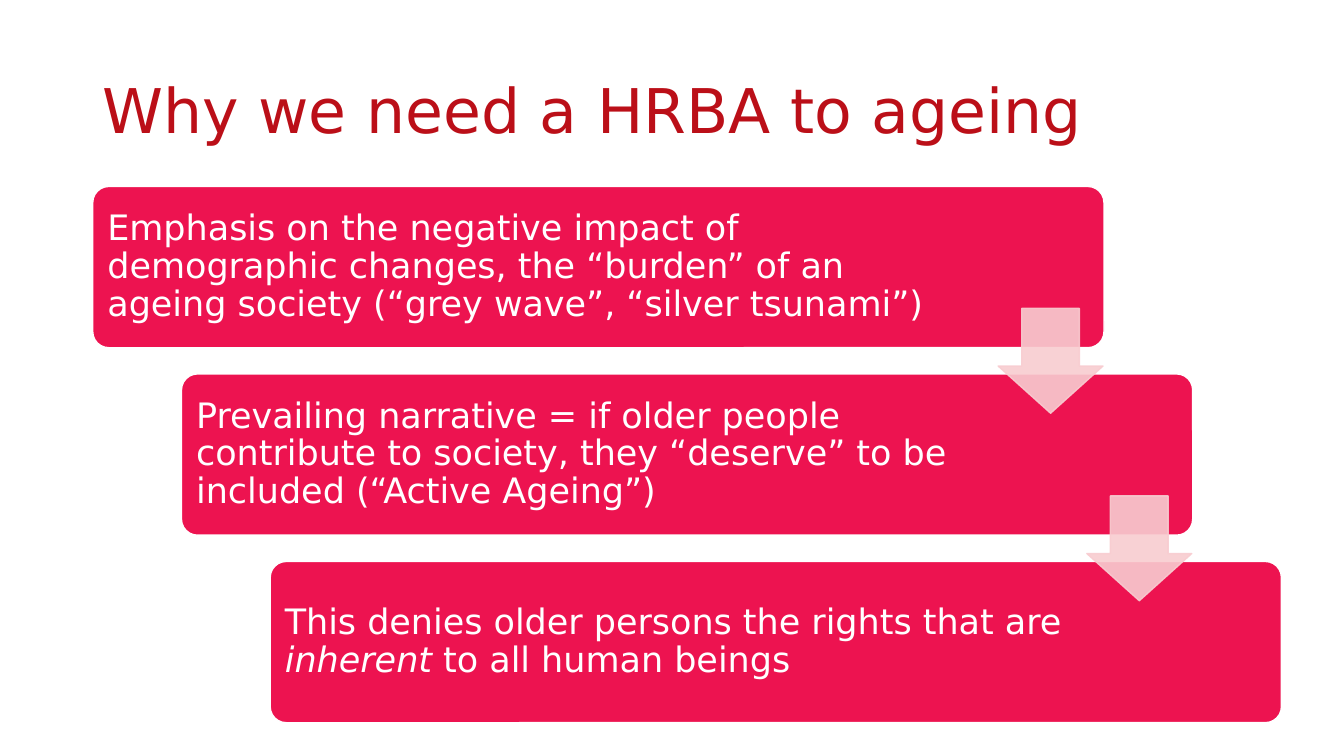
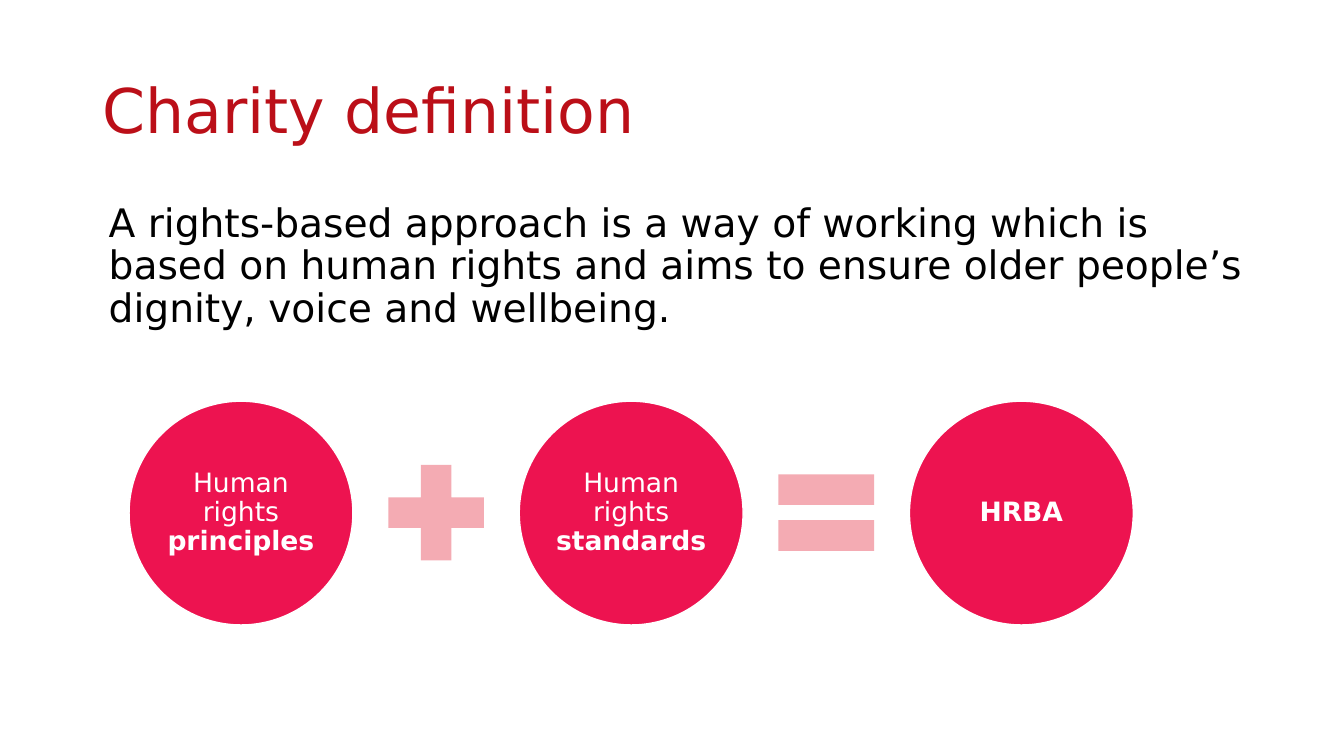
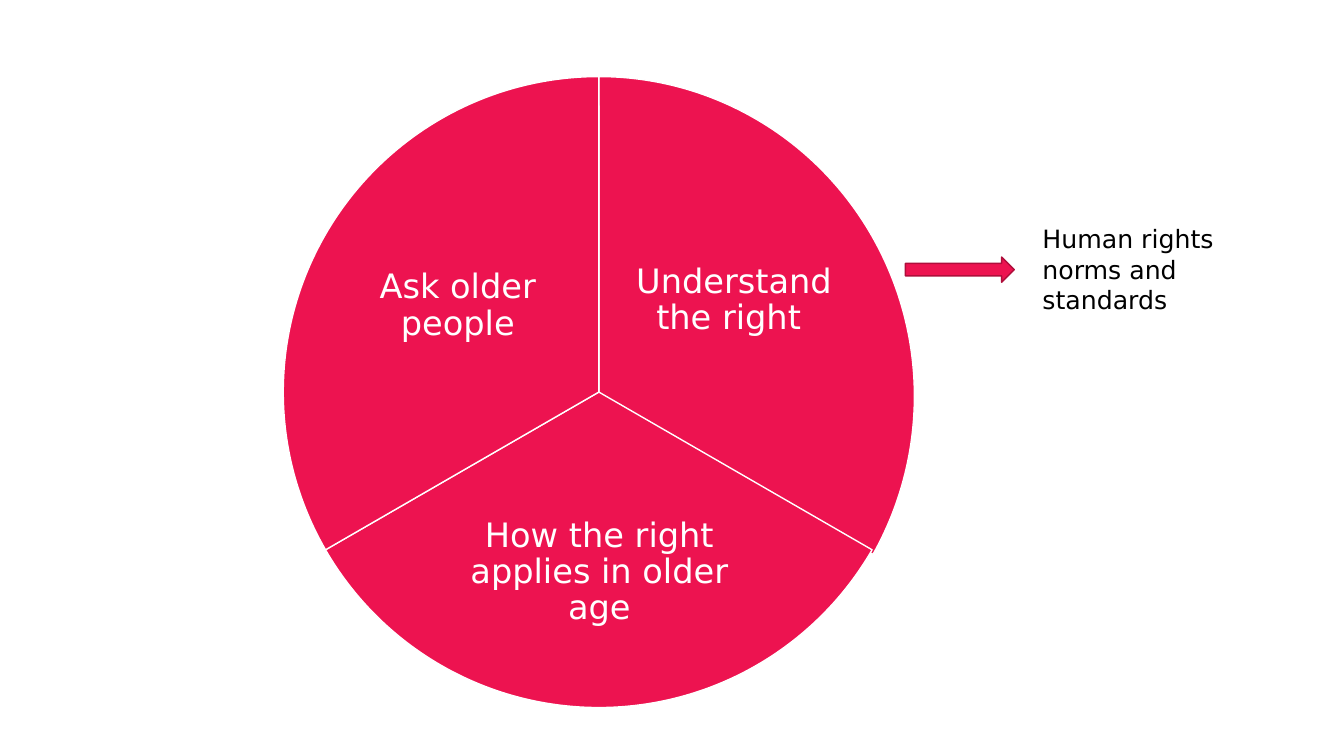
from dataclasses import dataclass

from lxml import etree
from pptx import Presentation
from pptx.dml.color import RGBColor
from pptx.enum.shapes import MSO_SHAPE
from pptx.enum.text import MSO_ANCHOR, PP_ALIGN
from pptx.oxml.ns import qn
from pptx.util import Pt

# Scale: 100 px to the inch
PX = 9144
FONT = "DejaVu Sans"

RED = RGBColor(0xBB, 0x0F, 0x18)
PINK = RGBColor(0xED, 0x13, 0x50)
DARK_PINK = RGBColor(0xAF, 0x0E, 0x3B)
PALE = RGBColor(0xF8, 0xCC, 0xD0)
ROSE = RGBColor(0xF4, 0xAB, 0xB3)
WHITE = RGBColor(0xFF, 0xFF, 0xFF)
BLACK = RGBColor(0, 0, 0)

ROUNDED = MSO_SHAPE.ROUNDED_RECTANGLE
DOWN = MSO_SHAPE.DOWN_ARROW
RIGHT = MSO_SHAPE.RIGHT_ARROW
OVAL = MSO_SHAPE.OVAL
PLUS = MSO_SHAPE.MATH_PLUS
EQUAL = MSO_SHAPE.MATH_EQUAL
# The pie preset
PIE = MSO_SHAPE.PIE
LEFT, CENTER = PP_ALIGN.LEFT, PP_ALIGN.CENTER
TOP, MIDDLE = MSO_ANCHOR.TOP, MSO_ANCHOR.MIDDLE


@dataclass(frozen=True)
class Run:
    text: str
    bold: bool = False
    italic: bool = False


@dataclass(frozen=True)
class Step:
    runs: tuple[Run, ...]
    right_inset: int


@dataclass(frozen=True)
class Slice:
    text: str
    height: int
    start: int  # degrees, clockwise from the right
    end: int
    label_box: tuple[int, int, int, int]


STEPS = (
    Step((Run("Emphasis on the negative impact of demographic changes, the “burden” "
              "of an ageing society (“grey wave”, “silver tsunami”)"),), 174),
    Step((Run("Prevailing narrative = if older people contribute to society, "
              "they “deserve” to be included (“Active Ageing”)"),), 202),
    Step((Run("This denies older persons the rights that are "),
          Run("inherent", italic=True), Run(" to all human beings")), 202),
)
CIRCLES = (
    (Run("Human rights "), Run("principles", bold=True)),
    (Run("Human rights "), Run("standards", bold=True)),
    (Run("HRBA", bold=True),),
)
SLICES = (
    Slice("Understand the right ", 634, 270, 30, (622, 193, 212, 211)),
    Slice("How the right applies in older age", 626, 30, 150, (453, 471, 283, 194)),
    Slice("Ask older people", 626, 150, 270, (348, 199, 212, 209)),
)


def write(sp, runs: tuple[Run, ...], *, size: int, color: RGBColor = WHITE,
          align=LEFT, anchor=MIDDLE, spacing: float = 0.9,
          insets: tuple[int, int, int, int] = (10, 5, 10, 5)) -> None:
    """Fill a shape or text box with one formatted paragraph."""
    tf = sp.text_frame
    tf.word_wrap = True
    tf.vertical_anchor = anchor
    tf.margin_left, tf.margin_top, tf.margin_right, tf.margin_bottom = (
        v * PX for v in insets)
    p = tf.paragraphs[0]
    p.alignment = align
    p.line_spacing = spacing
    for run in runs:
        r = p.add_run()
        r.text = run.text
        r.font.name, r.font.size = FONT, Pt(size)
        r.font.bold, r.font.italic = run.bold, run.italic
        r.font.color.rgb = color


def text_box(s, x: int, y: int, w: int, h: int, text: str, **fmt) -> None:
    sp = s.shapes.add_textbox(x * PX, y * PX, w * PX, h * PX)
    write(sp, (Run(text),), **fmt)


def shape(s, kind, x: int, y: int, w: int, h: int, *, fill: RGBColor = PINK,
          line: RGBColor | None = WHITE, adj: tuple[float, ...] = (),
          opacity: int = 100):
    sp = s.shapes.add_shape(kind, x * PX, y * PX, w * PX, h * PX)
    sp.shadow.inherit = False
    for i, value in enumerate(adj):
        sp.adjustments[i] = value
    sp.fill.solid()
    sp.fill.fore_color.rgb = fill
    if line is None:
        sp.line.fill.background()
    else:
        sp.line.color.rgb = line
        sp.line.width = Pt(1)
    if opacity < 100:
        for clr in sp.element.spPr.iter(qn("a:srgbClr")):
            etree.SubElement(clr, qn("a:alpha")).set("val", str(opacity * 1000))
    return sp


def title(s, text: str) -> None:
    text_box(s, 92, 40, 1150, 145, text, size=44, color=RED)


def staircase_slide(s) -> None:
    title(s, "Why we need a HRBA to ageing")
    corners = [(92 + 88 * i, 185 + 186 * i) for i in range(len(STEPS))]
    for step, (x, y) in zip(STEPS, corners):
        sp = shape(s, ROUNDED, x, y, 1003, 160, adj=(0.1,))
        write(sp, step.runs, size=25, insets=(10, 10, step.right_inset, 10))
    # Arrows leading to the next step
    for x, y in corners[:-1]:
        shape(s, DOWN, x + 898, y + 121, 104, 104, fill=PALE, line=PALE,
              adj=(0.55, 0.45), opacity=90)


def equation_slide(s) -> None:
    title(s, "Charity definition")
    text_box(s, 98, 197, 1150, 476,
             "A rights-based approach is a way of working which is based on human "
             "rights and aims to ensure older people’s dignity, voice and wellbeing.",
             size=28, color=BLACK, anchor=TOP)
    # Circles and the signs between them
    left, top, size, sign_size, gap = 128, 398, 222, 129, 18
    pitch = size + sign_size + 2 * gap
    for i, runs in enumerate(CIRCLES):
        sp = shape(s, OVAL, left + i * pitch, top, size, size)
        write(sp, runs, size=19, align=CENTER, insets=(3, 3, 3, 3))
    for i, sign in enumerate((PLUS, EQUAL)):
        shape(s, sign, left + i * pitch + size + gap, top + (size - sign_size) // 2,
              sign_size, sign_size, fill=ROSE, line=None)


def pie_slide(s) -> None:
    for part in SLICES:
        # Angles are stored in 60000ths of a degree, adjustments in 100000ths
        shape(s, PIE, 281, 76, 626, part.height,
              adj=(part.start * 0.6, part.end * 0.6))
        text_box(s, *part.label_box, part.text, size=24, align=CENTER,
                 insets=(3, 3, 3, 3))
    # Side note
    text_box(s, 1024, 217, 255, 101, "Human rights norms and standards",
             size=18, color=BLACK, anchor=TOP, spacing=1.0)
    shape(s, RIGHT, 898, 255, 108, 25, line=DARK_PINK)


def main() -> None:
    prs = Presentation()
    prs.slide_width, prs.slide_height = 1333 * PX, 750 * PX
    blank = prs.slide_layouts[6]
    for build in (staircase_slide, equation_slide, pie_slide):
        build(prs.slides.add_slide(blank))
    prs.save("out.pptx")


if __name__ == "__main__":
    main()
